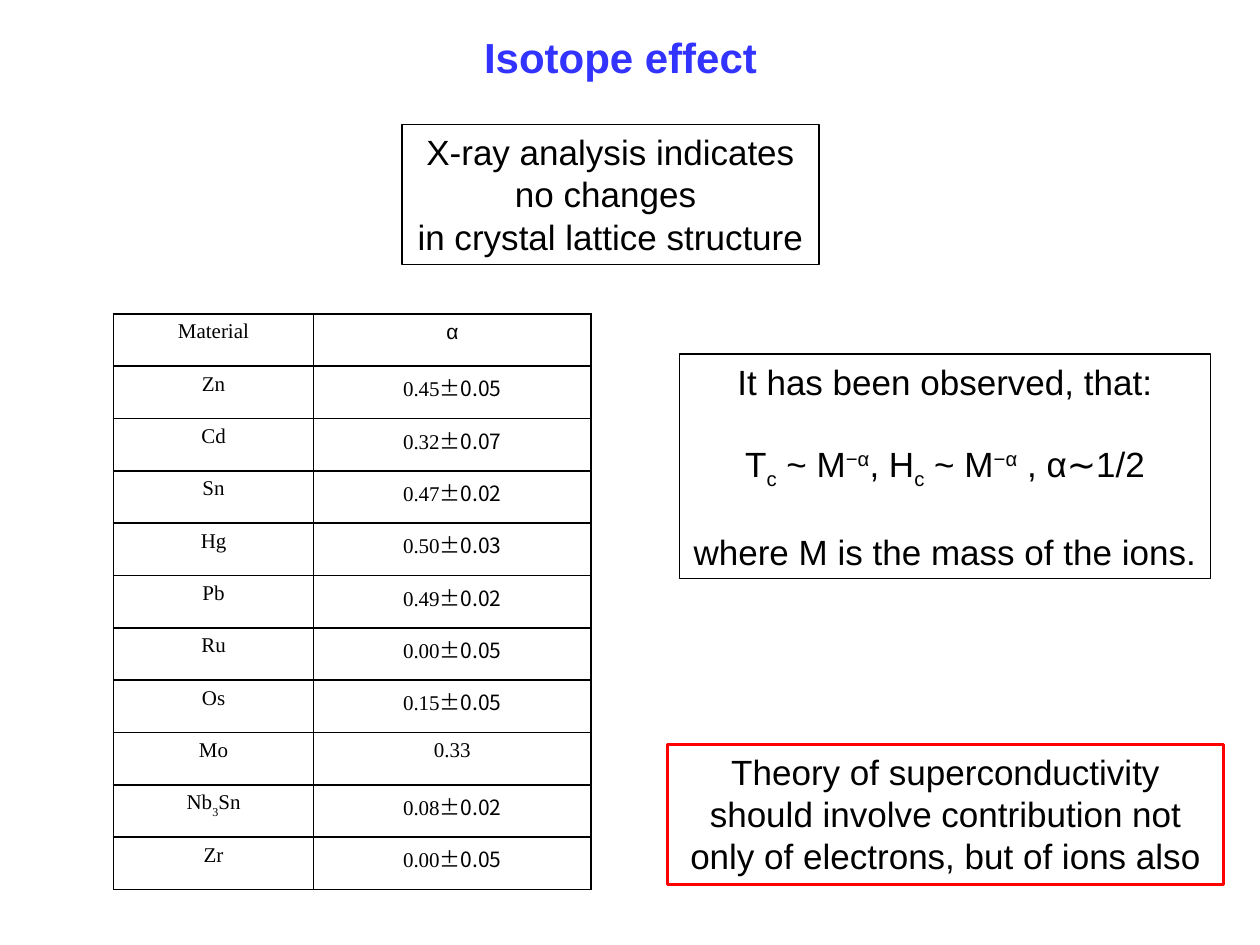
from typing import NamedTuple

from lxml import etree
from pptx import Presentation
from pptx.dml.color import RGBColor
from pptx.enum.shapes import MSO_SHAPE
from pptx.enum.text import MSO_ANCHOR, PP_ALIGN
from pptx.oxml.ns import qn
from pptx.util import Inches, Pt

RECT = MSO_SHAPE.RECTANGLE
CENTER = PP_ALIGN.CENTER
TOP, MIDDLE = MSO_ANCHOR.TOP, MSO_ANCHOR.MIDDLE

BLACK = RGBColor(0x00, 0x00, 0x00)
BLUE = RGBColor(0x33, 0x33, 0xFF)
RED = RGBColor(0xFF, 0x00, 0x00)

SANS, SERIF, CJK = "Arial", "Times New Roman", "Noto Sans CJK SC"
UNIT = Inches(0.1)  # the slide is a grid of 100 columns by 75 rows
COLS, ROWS = 100, 75


class Bit(NamedTuple):
    """A run of text; shift is its baseline offset in percent."""
    text: str
    font: str = SANS
    shift: int = 0


class Area(NamedTuple):
    """A place on the grid, in columns and rows."""
    left: float
    top: float
    width: float
    height: float

    def scale(self) -> list[int]:
        return [grid(part) for part in self]


class Box(NamedTuple):
    area: Area
    color: RGBColor
    weight: float
    lines: list[list[Bit]]
    gap: float = 0
    wrap: bool = True


def grid(count: float) -> int:
    return round(count * UNIT)


def add_bits(para, bits: list[Bit], size: float, color=BLACK, bold=False) -> None:
    para.alignment = CENTER
    for bit in bits:
        run = para.add_run()
        run.text = bit.text
        font = run.font
        font.name, font.size, font.bold = bit.font, Pt(size), bold
        font.color.rgb = color
        if bit.shift:
            run._r.get_or_add_rPr().set("baseline", str(bit.shift * 1000))


def add_title(slide, text: str, area: Area) -> None:
    title = slide.shapes.title
    title.left, title.top, title.width, title.height = area.scale()
    frame = title.text_frame
    frame.word_wrap = False
    frame.vertical_anchor = MIDDLE
    add_bits(frame.paragraphs[0], [Bit(text)], 24, BLUE, True)


def add_box(slide, box: Box) -> None:
    shape = slide.shapes.add_shape(RECT, *box.area.scale())
    shape.shadow.inherit = False
    shape.fill.background()
    shape.line.color.rgb = box.color
    shape.line.width = Pt(box.weight)
    frame = shape.text_frame
    frame.word_wrap = box.wrap
    frame.vertical_anchor = TOP
    for row, bits in enumerate(box.lines):
        para = frame.add_paragraph() if row else frame.paragraphs[0]
        para.space_before = Pt(box.gap if row else 0)
        add_bits(para, bits, 20)


def add_edges(cell) -> None:
    """Draw a thin black line on all four sides of a cell."""
    props = cell._tc.get_or_add_tcPr()
    for side in ("a:lnL", "a:lnR", "a:lnT", "a:lnB"):
        line = etree.SubElement(props, qn(side), w=str(Pt(1)))
        fill = etree.SubElement(line, qn("a:solidFill"))
        etree.SubElement(fill, qn("a:srgbClr"), val=str(BLACK))


def add_table(slide, rows: list[list[list[Bit]]], area: Area, widths: list[float]) -> None:
    table = slide.shapes.add_table(len(rows), len(widths), *area.scale()).table
    table.first_row = table.horz_banding = False
    for col, width in zip(table.columns, widths):
        col.width = grid(width)
    for row, cells in zip(table.rows, rows):
        row.height = grid(area.height / len(rows))
        for cell, bits in zip(row.cells, cells):
            add_edges(cell)
            cell.fill.background()
            add_bits(cell.text_frame.paragraphs[0], bits, 12)


def name_bits(name: str) -> list[Bit]:
    """Set the digits of a formula as subscripts."""
    head, digit, tail = name.partition("3")
    bits = [Bit(head, SERIF), Bit(digit, SERIF, -30), Bit(tail, SERIF)]
    return [bit for bit in bits if bit.text]


def value_bits(value: str, error: str) -> list[Bit]:
    bits = [Bit(value, SERIF)]
    return bits + [Bit("±" + error, CJK)] if error else bits


DATA = [
    ("Zn", "0.45", "0.05"), ("Cd", "0.32", "0.07"), ("Sn", "0.47", "0.02"),
    ("Hg", "0.50", "0.03"), ("Pb", "0.49", "0.02"), ("Ru", "0.00", "0.05"),
    ("Os", "0.15", "0.05"), ("Mo", "0.33", ""), ("Nb3Sn", "0.08", "0.02"),
    ("Zr", "0.00", "0.05"),
]
HEAD = [[Bit("Material", SERIF)], [Bit("α")]]
SUB, POWER = Bit("c", shift=-25), Bit("−α", shift=30)
LAW = [Bit("T"), SUB, Bit(" ~ M"), POWER, Bit(", H"), SUB, Bit(" ~ M"), POWER,
       Bit(" , α∼1/2")]

BOXES = [
    Box(Area(31.9, 9.9, 33.1, 11.1), BLACK, 0.75, [
        [Bit("X-ray analysis indicates no changes ")],
        [Bit("in crystal lattice structure")],
    ]),
    Box(Area(53.9, 28.1, 42.2, 17.8), BLACK, 0.75, [
        [Bit("It has been observed, that:")],
        LAW,
        [Bit("where M is the mass of the ions.")],
    ], gap=23, wrap=False),
    Box(Area(53, 59.1, 44.1, 11.1), RED, 1.75, [
        [Bit("Theory of superconductivity should involve contribution not "
             "only of electrons, but of ions also")],
    ]),
]


def main() -> None:
    deck = Presentation()
    deck.slide_width, deck.slide_height = grid(COLS), grid(ROWS)
    slide = deck.slides.add_slide(deck.slide_layouts[5])
    add_title(slide, "Isotope effect", Area(37.3, 2, 23.9, 5))
    rows = [HEAD] + [[name_bits(name), value_bits(value, error)]
                     for name, value, error in DATA]
    add_table(slide, rows, Area(9, 24.9, 37.9, 45.7), [15.9, 22])
    for box in BOXES:
        add_box(slide, box)
    deck.save("out.pptx")


if __name__ == "__main__":
    main()
